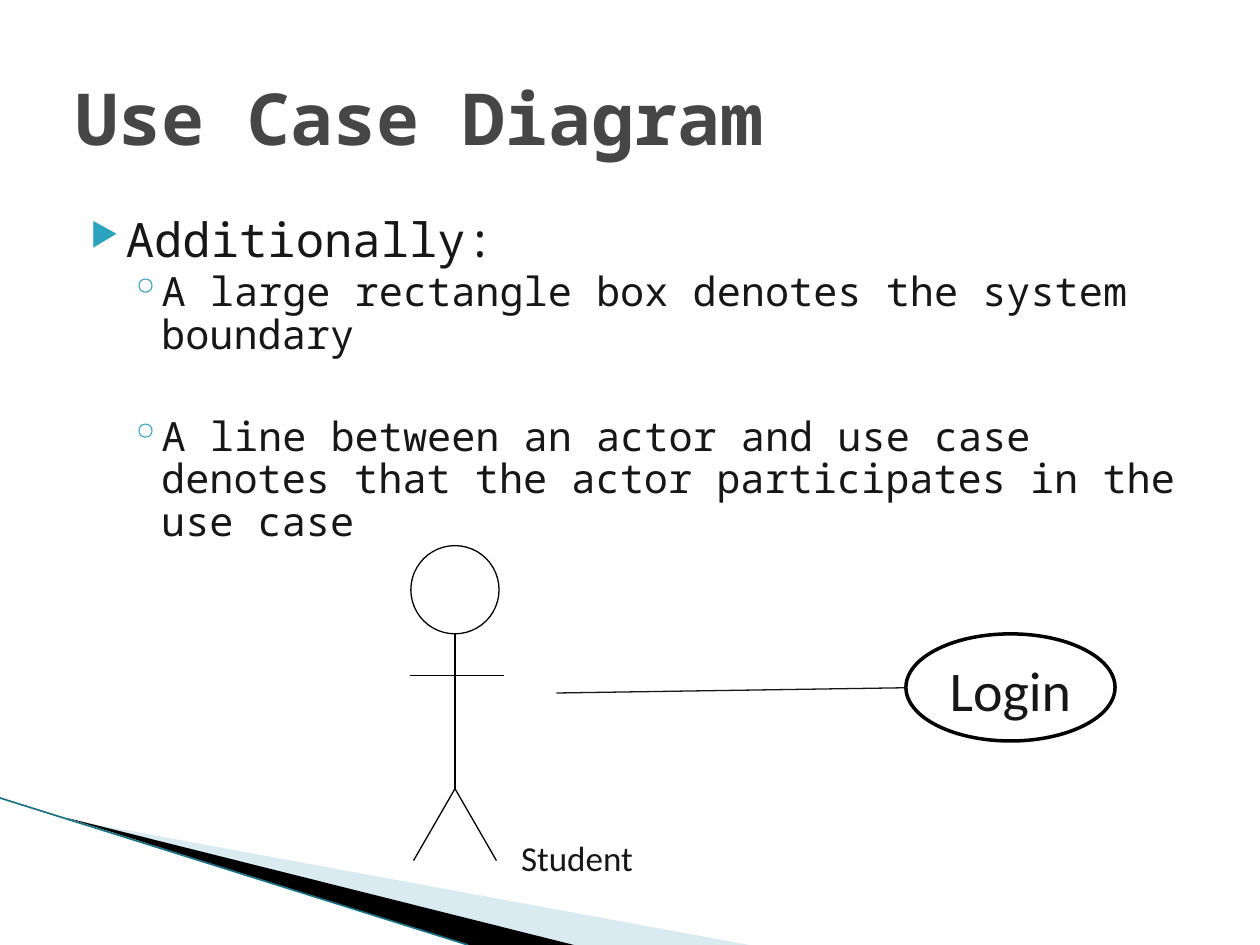
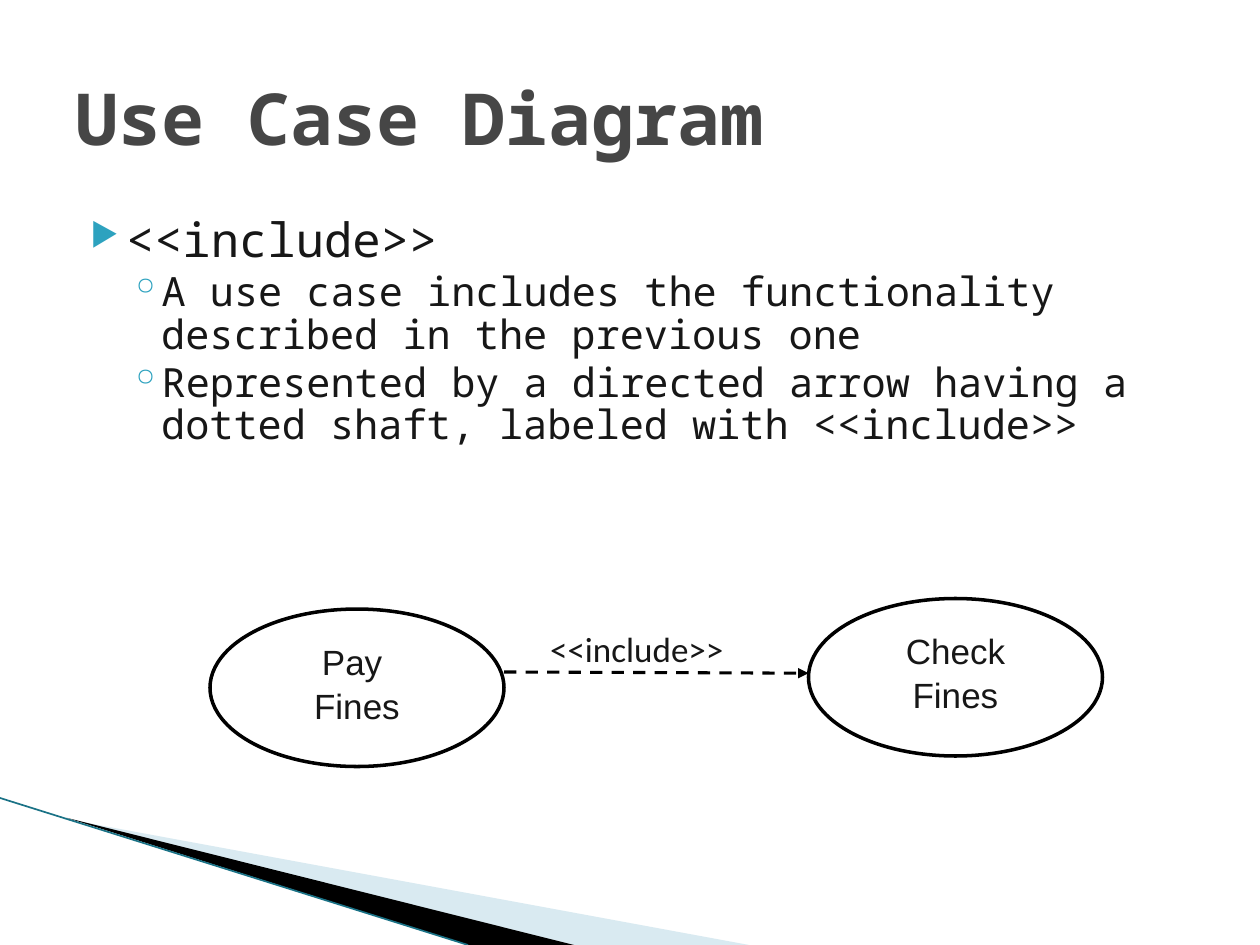
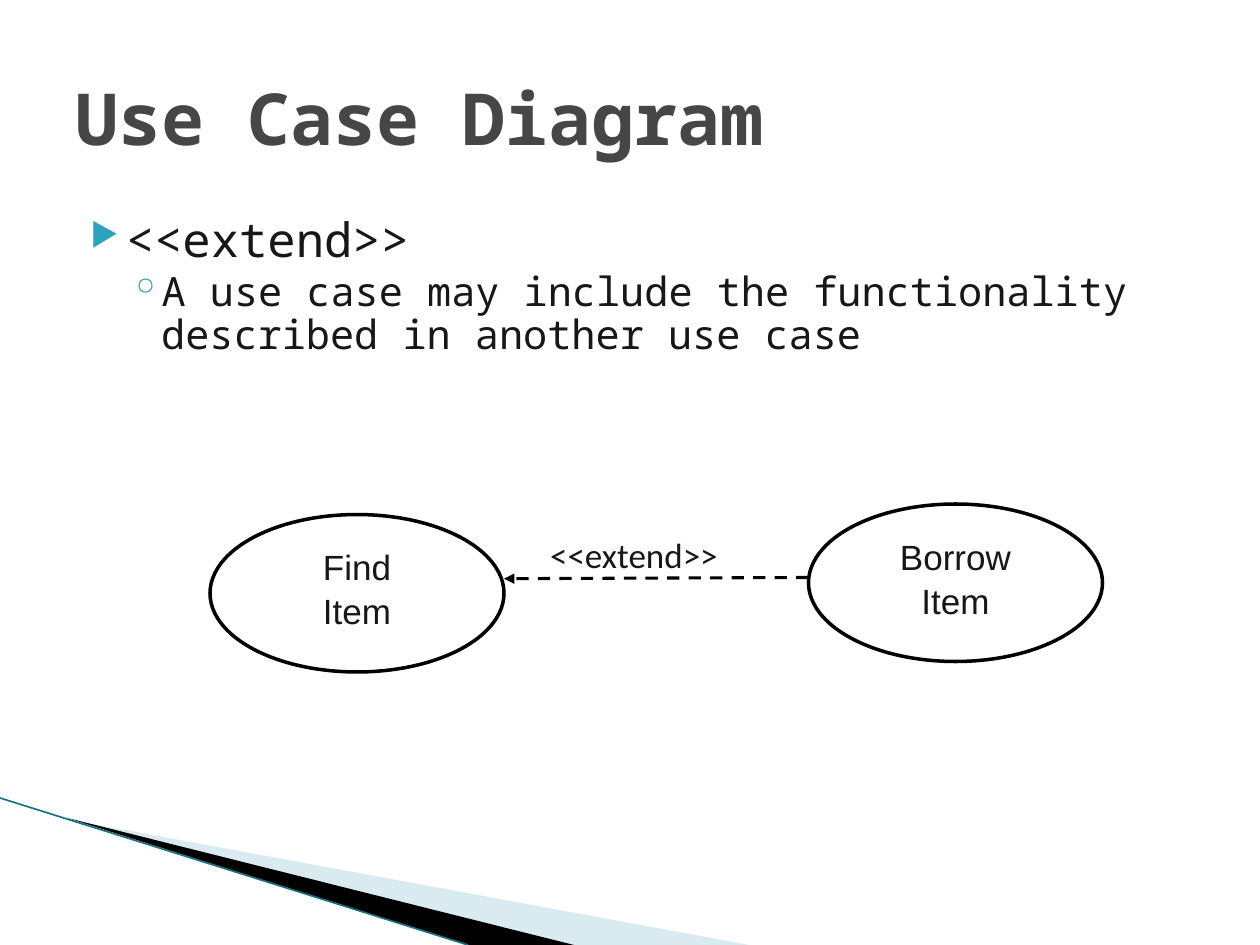
from lxml import etree
from pptx import Presentation
from pptx.dml.color import RGBColor
from pptx.enum import dml, shapes, text
from pptx.oxml import ns
from pptx.util import Pt

BLACK = RGBColor(0x00, 0x00, 0x00)
WHITE = RGBColor(0xFF, 0xFF, 0xFF)
INK = RGBColor(0x17, 0x17, 0x17)
TITLE_GRAY = RGBColor(0x46, 0x46, 0x46)
BULLET_TEAL = RGBColor(0x2D, 0xA2, 0xBF)
EDGE_TEAL = RGBColor(0x1A, 0x72, 0x86)
PALE_BLUE = RGBColor(0xA0, 0xCB, 0xDC)

MONO, SANS, LABEL = "Noto Sans Mono", "Arial", "Calibri"
TITLE = "Use Case Diagram"
OVAL = shapes.MSO_SHAPE.OVAL

# Each point: level, wording, space before
SLIDES = [
    {"points": [(0, "Additionally:", 0),
                (1, "A large rectangle box denotes the system boundary", 3.2),
                (1, "A line between an actor and use case denotes that the actor "
                    "participates in the use case", 34)],
     "actor": "Student", "use_case": "Login"},
    {"points": [(0, "<<include>>", 0),
                (1, "A use case includes the functionality described in the "
                    "previous one", 3.2),
                (1, "Represented by a directed arrow having a dotted shaft, "
                    "labeled with <<include>>", 3.2)],
     "relation": "<<include>>", "cases": ("Pay \vFines", "Check Fines"),
     "top": 342, "points_right": True},
    {"points": [(0, "<<extend>>", 0),
                (1, "A use case may include the functionality described in "
                    "another use case", 3.2)],
     "relation": "<<extend>>", "cases": ("Find\vItem", "Borrow\vItem"),
     "top": 288, "points_right": False},
]

# Per level: font size, left margin, hanging indent, bullet, bullet size %
LEVELS = [(27, 28.8, 20.2, "▶", 68), (23, 49, 18, "◦", 100)]


def style(paragraph, font_name, size, color, bold=False):
    for run in paragraph.runs:
        font = run.font
        font.name, font.size, font.bold = font_name, Pt(size), bold
        font.color.rgb = color


def add_line(slide, start, end, color=BLACK, width=0.75, arrow=False):
    line = slide.shapes.add_connector(
        shapes.MSO_CONNECTOR.STRAIGHT, *(Pt(v) for v in (*start, *end)))
    line.line.color.rgb, line.line.width = color, Pt(width)
    if arrow:
        line.line.dash_style = dml.MSO_LINE.DASH
        etree.SubElement(line.line._get_or_add_ln(), ns.qn("a:tailEnd"), type="triangle")
    etree.SubElement(line._element.spPr, ns.qn("a:effectLst"))


def add_figure(slide, kind, box, line_width):
    figure = slide.shapes.add_shape(kind, *(Pt(v) for v in box))
    figure.shadow.inherit = False
    if line_width:
        figure.fill.solid()
        figure.fill.fore_color.rgb = WHITE
        figure.line.color.rgb, figure.line.width = BLACK, Pt(line_width)
    else:
        figure.fill.background()
        figure.line.fill.background()
    return figure


def write_in(figure, words, font_name, size, align, spacing=1.0):
    frame = figure.text_frame
    frame.text = words
    frame.word_wrap = True
    frame.vertical_anchor = text.MSO_ANCHOR.TOP
    paragraph = frame.paragraphs[0]
    paragraph.alignment, paragraph.line_spacing = align, spacing
    style(paragraph, font_name, size, INK)


def add_use_case(slide, words, box, font_name=SANS, size=20, spacing=1.05):
    write_in(add_figure(slide, OVAL, box, 2), words, font_name, size,
             text.PP_ALIGN.CENTER, spacing)


def add_label(slide, words, left, top):
    label = add_figure(slide, shapes.MSO_SHAPE.FLOWCHART_ALTERNATE_PROCESS,
                       (left, top, 138, 26.6), 0)
    write_in(label, words, LABEL, 20, text.PP_ALIGN.LEFT)


def add_wedge(slide, points, color, opacity=100):
    start, *rest = [(Pt(x), Pt(y)) for x, y in points]
    builder = slide.shapes.build_freeform(*start)
    builder.add_line_segments(rest, close=True)
    wedge = builder.convert_to_shape()
    wedge.shadow.inherit = False
    wedge.fill.solid()
    wedge.fill.fore_color.rgb = color
    wedge.line.fill.background()
    if opacity < 100:
        tint = wedge._element.spPr.find(".//" + ns.qn("a:srgbClr"))
        etree.SubElement(tint, ns.qn("a:alpha"), val=str(opacity * 1000))


def add_corner(slide):
    """Wedges and edge line at the lower left."""
    add_wedge(slide, [(39.6, 468.4), (428, 540), (328, 540)], PALE_BLUE, 40)
    add_wedge(slide, [(38, 467.3), (328, 540), (267.5, 540)], BLACK)
    add_line(slide, (0, 456), (267.5, 540), EDGE_TEAL, 0.95)


def add_bullet(paragraph, level):
    _, margin, hanging, mark, percent = LEVELS[level]
    props = paragraph._p.get_or_add_pPr()
    props.set("marL", str(Pt(margin)))
    props.set("indent", str(-Pt(hanging)))
    color = etree.SubElement(props, ns.qn("a:buClr"))
    etree.SubElement(color, ns.qn("a:srgbClr"), val=str(BULLET_TEAL))
    etree.SubElement(props, ns.qn("a:buSzPct"), val=str(percent * 1000))
    etree.SubElement(props, ns.qn("a:buChar"), char=mark)


def add_points(slide, points):
    frame = slide.shapes.add_textbox(Pt(36), Pt(116.6), Pt(648), Pt(356.4)).text_frame
    frame.word_wrap = True
    frame.margin_top = Pt(7.6)
    for index, (level, words, gap) in enumerate(points):
        paragraph = frame.add_paragraph() if index else frame.paragraphs[0]
        paragraph.text = words
        paragraph.level = level
        add_bullet(paragraph, level)
        paragraph.line_spacing = 0.88
        paragraph.space_before = Pt(gap)
        style(paragraph, MONO, LEVELS[level][0], INK)


def add_title(slide):
    frame = slide.shapes.add_textbox(Pt(36), Pt(21.6), Pt(648), Pt(90)).text_frame
    frame.word_wrap = True
    frame.vertical_anchor = text.MSO_ANCHOR.MIDDLE
    frame.text = TITLE
    style(frame.paragraphs[0], MONO, 41, TITLE_GRAY, bold=True)


def add_actor(slide, name):
    center, neck, arms, hip, feet = 260, 362.2, 386, 450.7, 491.8
    head = 50.4
    add_figure(slide, shapes.MSO_SHAPE.FLOWCHART_CONNECTOR,
               (center - head / 2, neck - head, head, head), 0.75)
    add_line(slide, (center, neck), (center, hip))
    add_line(slide, (center - 26, arms), (center + 28, arms))
    for side in (-1, 1):
        add_line(slide, (center, hip), (center + side * 23.7, feet))
    add_label(slide, name, 289.4, 473)


def add_relation(slide, content):
    """Two use cases joined by a labelled dashed arrow."""
    top, width, height = content["top"], 168, 90
    left_x, right_x = 120, 462
    left_case, right_case = content["cases"]
    add_use_case(slide, right_case, (right_x, top, width, height))
    add_use_case(slide, left_case, (left_x, top + 6, width, height))
    if content["points_right"]:
        start, end = (left_x + width, top + 42), (right_x, top + 42.7)
    else:
        start, end = (right_x, top + 42), (left_x + width, top + 42.7)
    add_line(slide, start, end, width=1.75, arrow=True)
    add_label(slide, content["relation"], 306, top + 12)


def main():
    deck = Presentation()
    deck.slide_width, deck.slide_height = Pt(720), Pt(540)
    for content in SLIDES:
        slide = deck.slides.add_slide(deck.slide_layouts[6])
        add_corner(slide)
        add_points(slide, content["points"])
        add_title(slide)
        if "actor" in content:
            add_actor(slide, content["actor"])
            add_use_case(slide, content["use_case"], (517.7, 362.2, 119.5, 61.2),
                         LABEL, 32, 1.0)
            add_line(slide, (318, 396), (517.7, 393), INK)
        else:
            add_relation(slide, content)
    deck.save("out.pptx")


if __name__ == "__main__":
    main()
